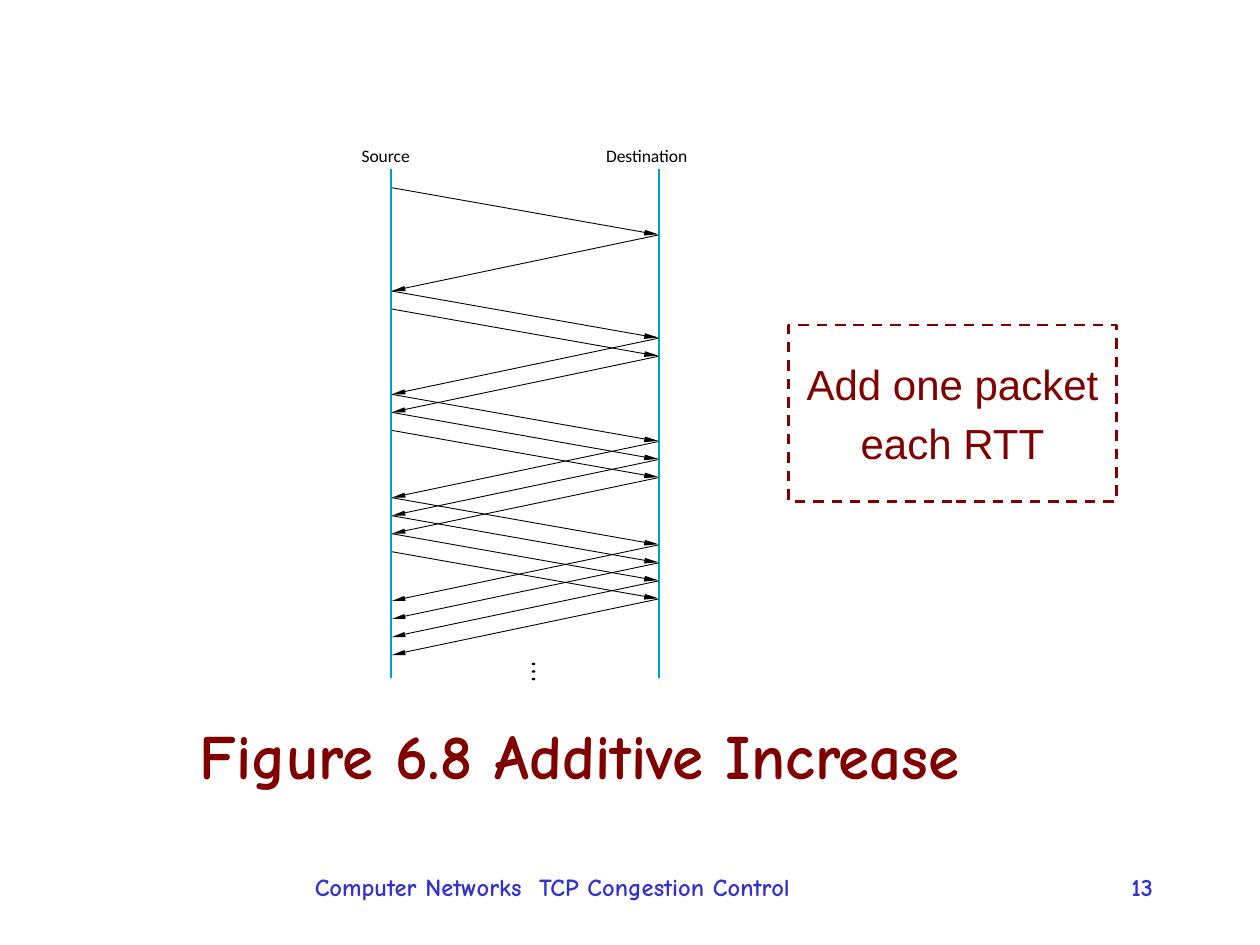
from math import cos, pi, sin

from pptx import Presentation
from pptx.dml.color import RGBColor
from pptx.enum.dml import MSO_LINE_DASH_STYLE as Dash
from pptx.enum.shapes import MSO_CONNECTOR as Connector, MSO_SHAPE as Shape
from pptx.enum.text import MSO_ANCHOR as Anchor, PP_ALIGN as Align
from pptx.oxml import parse_xml
from pptx.oxml.ns import nsdecls
from pptx.util import Inches, Pt

WIDTH, HEIGHT = Inches(10), Inches(7.5)
COLUMNS, ROWS = 100, 75
BLACK, MAROON, BLUE, CYAN = "000000", "800000", "3333CC", "00A0C6"
TITLE = dict(name="Comic Neue", size=Pt(36), bold=True)
FOOTER = dict(name="Comic Neue", size=Pt(14), bold=True)
LABEL = dict(name="Calibri", size=Pt(10), bold=False)
NOTE = dict(name="Arial", size=Pt(24), bold=False)


def colour(code):
    return RGBColor.from_string(code)


class Painter:
    """Draws styled elements on one slide, placed in grid columns and rows."""

    def __init__(self, page):
        self.page = page
        self.shapes = page.shapes

    def point(self, column, row):
        return round(column * WIDTH / COLUMNS), round(row * HEIGHT / ROWS)

    def area(self, left, top, width, height):
        return (*self.point(left, top), *self.point(width, height))

    def fill_text(self, box, lines, font, code, align=Align.LEFT,
                  anchor=Anchor.TOP, wrap=True, gap=0):
        frame = box.text_frame
        frame.word_wrap = wrap
        frame.vertical_anchor = anchor
        for number, line in enumerate(lines):
            para = frame.add_paragraph() if number else frame.paragraphs[0]
            para.alignment = align
            para.space_before = Pt(gap if number else 0)
            span = para.add_run()
            span.text = line
            for key, value in font.items():
                setattr(span.font, key, value)
            span.font.color.rgb = colour(code)
        return frame

    def title(self, line, place):
        box = self.shapes.title
        for key, value in zip(("left", "top", "width", "height"), self.area(*place)):
            setattr(box, key, value)
        self.fill_text(box, [line], TITLE, MAROON, Align.CENTER, Anchor.MIDDLE)

    def text(self, line, place, font, code, **layout):
        box = self.shapes.add_textbox(*self.area(*place))
        return self.fill_text(box, [line], font, code, **layout)

    def label(self, line, place):
        frame = self.text(line, place, LABEL, BLACK, wrap=False)
        for side in ("left", "top", "right", "bottom"):
            setattr(frame, f"margin_{side}", 0)

    def line(self, start, end, code, weight):
        line = self.shapes.add_connector(
            Connector.STRAIGHT, *self.point(*start), *self.point(*end))
        line.line.color.rgb = colour(code)
        line.line.width = Pt(weight)
        line._element.spPr.append(parse_xml(f"<a:effectLst {nsdecls('a')}/>"))

    def outline(self, contours, code):
        builder = None
        for contour in contours:
            first, *others = [self.point(*corner) for corner in contour]
            if builder is None:
                builder = self.shapes.build_freeform(*first)
            else:
                builder.move_to(*first)
            builder.add_line_segments(others, close=True)
        shape = builder.convert_to_shape()
        shape.shadow.inherit = False
        shape.fill.solid()
        shape.fill.fore_color.rgb = colour(code)
        shape.line.fill.background()

    def dashed_box(self, lines, place):
        box = self.shapes.add_shape(Shape.RECTANGLE, *self.area(*place))
        box.shadow.inherit = False
        box.fill.background()
        box.line.color.rgb = colour(MAROON)
        box.line.width = Pt(1.5)
        box.line.dash_style = Dash.DASH
        self.fill_text(box, lines, NOTE, MAROON, Align.CENTER, Anchor.MIDDLE,
                       wrap=False, gap=5)

    def exchange(self, row):
        """A packet to the destination and its acknowledgement back."""
        self.line((31.1, row), (51.2, row + 3.55), BLACK, 0.5)
        self.outline([[(51.1, row + 3.8), (52.25, row + 3.7), (51.2, row + 3.35)]], BLACK)
        self.line((52.25, row + 3.75), (32, row + 8), BLACK, 0.5)
        self.outline([[(32.1, row + 7.8), (31.1, row + 8.2), (32.2, row + 8.2)]], BLACK)


def main():
    deck = Presentation()
    deck.slide_width, deck.slide_height = WIDTH, HEIGHT
    painter = Painter(deck.slides.add_slide(deck.slide_layouts[5]))
    painter.title("Figure 6.8 Additive Increase", (3.5, 54.8, 85, 10.1))

    # Timelines of the two hosts
    for name, left, width, column in (("Source", 28.7, 4.4, 31.05),
                                      ("Destination", 48.1, 6.9, 52.3)):
        painter.label(name, (left, 11.5, width, 1.7))
        painter.line((column, 13.45), (column, 53.8), CYAN, 1)

    # Each round trip sends one packet more than the last
    first_row, round_step, packet_step = 14.9, 8.2, 1.43
    for trip in range(4):
        for packet in range(trip + 1):
            painter.exchange(first_row + trip * round_step + packet * packet_step)

    # Dots that continue the pattern
    angles = [step * pi / 4 for step in range(8)]
    painter.outline([[(42.35 + 0.15 * cos(angle), row + 0.1 * sin(angle))
                      for angle in angles] for row in (52.7, 53.3, 53.9)], BLACK)

    # Remark and footer
    painter.dashed_box(["Add one packet", "each RTT"], (62.6, 25.8, 26, 14))
    painter.text("Computer Networks  TCP Congestion Control",
                 (24, 68.7, 54.3, 4.2), FOOTER, BLUE)
    painter.text("13", (77.5, 68.7, 15, 5), FOOTER, BLUE, align=Align.RIGHT)
    deck.save("out.pptx")


if __name__ == "__main__":
    main()
